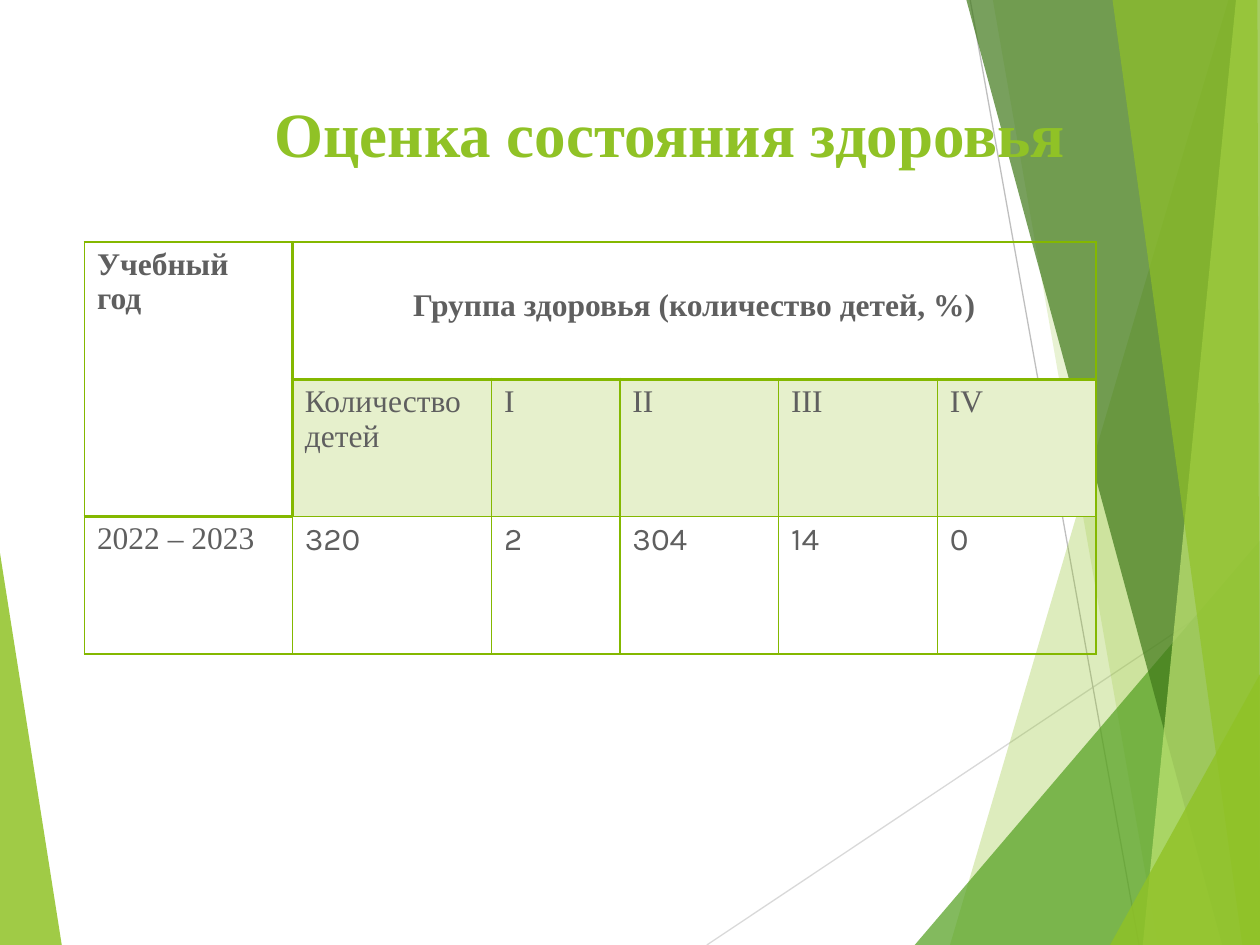
import pptx
import pptx.util
import pptx.dml.color
import pptx.enum.text
import pptx.oxml.ns
from lxml import etree

Inches = pptx.util.Inches
Pt = pptx.util.Pt
qn = pptx.oxml.ns.qn

COLORS = {
    "lime": "90C226", "green": "54A021", "forest": "3F7819", "pale": "C0E474",
    "light_gray": "D9D9D9", "gray": "BFBFBF", "text": "5F5F5F",
    "border": "84B800", "band": "E6F0CC",
}
SERIF = "Times New Roman"
LEFT_FACET = ([(0, 4.39), (0.49, 7.5), (0, 7.5)], "lime", 85)
RAYS = [((5.61, 7.5), (10, 4.57), "light_gray"), ((7.7, 0), (9.04, 7.5), "gray")]
RIGHT_FACETS = [
    ([(9.75, 0), (7.54, 7.5), (10, 7.5), (10, 0)], "lime", 30),
    ([(7.88, 0), (9.19, 7.5), (10, 7.5), (10, 0)], "lime", 20),
    ([(7.26, 7.5), (10, 4.29), (10, 7.5)], "green", 72),
    ([(7.67, 0), (9.7, 7.5), (10, 7.5), (10, 0)], "forest", 70),
    ([(9.81, 0), (9.07, 7.5), (10, 7.5), (10, 0)], "pale", 70),
    ([(8.83, 0), (9.86, 7.5), (10, 7.5), (9.98, 0)], "lime", 65),
    ([(8.81, 7.5), (10, 5.35), (10, 7.5)], "lime", 80),
]
COLUMN_WIDTHS = [1.65, 1.58, 1.02, 1.26, 1.26, 1.26]
ROW_HEIGHT = 1.09
ROWS = [
    ["Учебный год", "Группа здоровья (количество детей, %)", "", "", "", ""],
    ["", "Количество\nдетей", "I", "II", "III", "IV"],
    ["2022 – 2023", "320", "2", "304", "14", "0"],
]


def rgb(name):
    """Return the named colour."""
    return pptx.dml.color.RGBColor.from_string(COLORS[name])


def add_facet(page, points, color, opacity):
    """Add a translucent polygon with corners in inches."""
    corners = [(Inches(x), Inches(y)) for x, y in points]
    builder = page.shapes.build_freeform(*corners[0])
    builder.add_line_segments(corners[1:], close=True)
    facet = builder.convert_to_shape()
    facet.shadow.inherit = False
    facet.line.fill.background()
    facet.fill.solid()
    facet.fill.fore_color.rgb = rgb(color)
    value = facet.fill._xPr.find(".//" + qn("a:srgbClr"))
    etree.SubElement(value, qn("a:alpha"), val=str(opacity * 1000))


def add_ray(page, start, end, color):
    """Add a thin straight line between two points in inches."""
    ray = page.shapes.add_connector(
        pptx.enum.shapes.MSO_CONNECTOR.STRAIGHT, *map(Inches, start + end))
    ray.line.color.rgb = rgb(color)
    ray.line.width = Pt(0.75)
    etree.SubElement(ray._element.spPr, qn("a:effectLst"))


def format_text(frame, font, size, color, bold):
    """Give every run in a text frame the same font."""
    for para in frame.paragraphs:
        for span in para.runs:
            span.font.name = font
            span.font.size = Pt(size)
            span.font.bold = bold
            span.font.color.rgb = rgb(color)


def place_title(page):
    """Fill the title and bring it in front of the facets."""
    title = page.shapes.title
    title.left, title.top = Inches(2.18), Inches(0.74)
    title.width, title.height = Inches(6.35), Inches(0.63)
    frame = title.text_frame
    frame.text = "Оценка состояния здоровья"
    frame.word_wrap = True
    frame.auto_size = pptx.enum.text.MSO_AUTO_SIZE.NONE
    frame.vertical_anchor = pptx.enum.text.MSO_ANCHOR.TOP
    frame.margin_left = frame.margin_right = frame.margin_bottom = 0
    frame.margin_top = Inches(0.01)
    frame.paragraphs[0].alignment = pptx.enum.text.PP_ALIGN.LEFT
    frame.paragraphs[0].space_before = Pt(1)
    format_text(frame, SERIF, 36, "lime", True)
    page.shapes._spTree.append(title._element)


def heavy_sides(row, column):
    """Return the sides of a cell that carry the thick heading border."""
    if column == 0:
        return "T" if row == 2 else "RB"
    sides = {0: "B", 1: "T", 2: ""}[row]
    return sides + "L" if column == 1 and row < 2 else sides


def set_borders(cell, heavy):
    """Draw all four borders of a cell."""
    properties = cell._tc.get_or_add_tcPr()
    for side in "LRTB":
        width = Pt(2.25 if side in heavy else 1)
        line = etree.SubElement(properties, qn("a:ln" + side), w=str(width))
        fill = etree.SubElement(line, qn("a:solidFill"))
        etree.SubElement(fill, qn("a:srgbClr"), val=COLORS["border"])


def format_cell(cell, row, column, text):
    """Write and style one table cell."""
    set_borders(cell, heavy_sides(row, column))
    if row == 1 and column > 0:
        cell.fill.solid()
        cell.fill.fore_color.rgb = rgb("band")
    else:
        cell.fill.background()
    if not text:
        return
    group_heading = (row, column) == (0, 1)
    cell.margin_left = 0 if group_heading else Inches(0.1)
    cell.margin_right = Inches(0.3) if (row, column) == (0, 0) else 0
    cell.margin_top = Inches(0.37 if group_heading else 0.04)
    cell.margin_bottom = 0
    frame = cell.text_frame
    frame.text = text
    if group_heading:
        frame.paragraphs[0].alignment = pptx.enum.text.PP_ALIGN.CENTER
    else:
        frame.paragraphs[0].space_before = Pt(3)
    font = "Karla" if row == 2 and column > 0 else SERIF
    format_text(frame, font, 18, "text", row == 0)


def add_health_table(page):
    """Add the table of health groups by school year."""
    table = page.shapes.add_table(
        len(ROWS), len(COLUMN_WIDTHS), Inches(0.67), Inches(1.92),
        Inches(sum(COLUMN_WIDTHS)), Inches(ROW_HEIGHT * len(ROWS))).table
    table.first_row = table.horz_banding = False
    for column, width in zip(table.columns, COLUMN_WIDTHS):
        column.width = Inches(width)
    for row in table.rows:
        row.height = Inches(ROW_HEIGHT)
    table.cell(0, 0).merge(table.cell(1, 0))
    table.cell(0, 1).merge(table.cell(0, 5))
    for row, texts in enumerate(ROWS):
        for column, text in enumerate(texts):
            format_cell(table.cell(row, column), row, column, text)


def main():
    """Build and save the slide."""
    deck = pptx.Presentation()
    deck.slide_width, deck.slide_height = Inches(10), Inches(7.5)
    page = deck.slides.add_slide(deck.slide_layouts[5])
    add_facet(page, *LEFT_FACET)
    for ray in RAYS:
        add_ray(page, *ray)
    for facet in RIGHT_FACETS:
        add_facet(page, *facet)
    place_title(page)
    add_health_table(page)
    deck.save("out.pptx")


if __name__ == "__main__":
    main()
